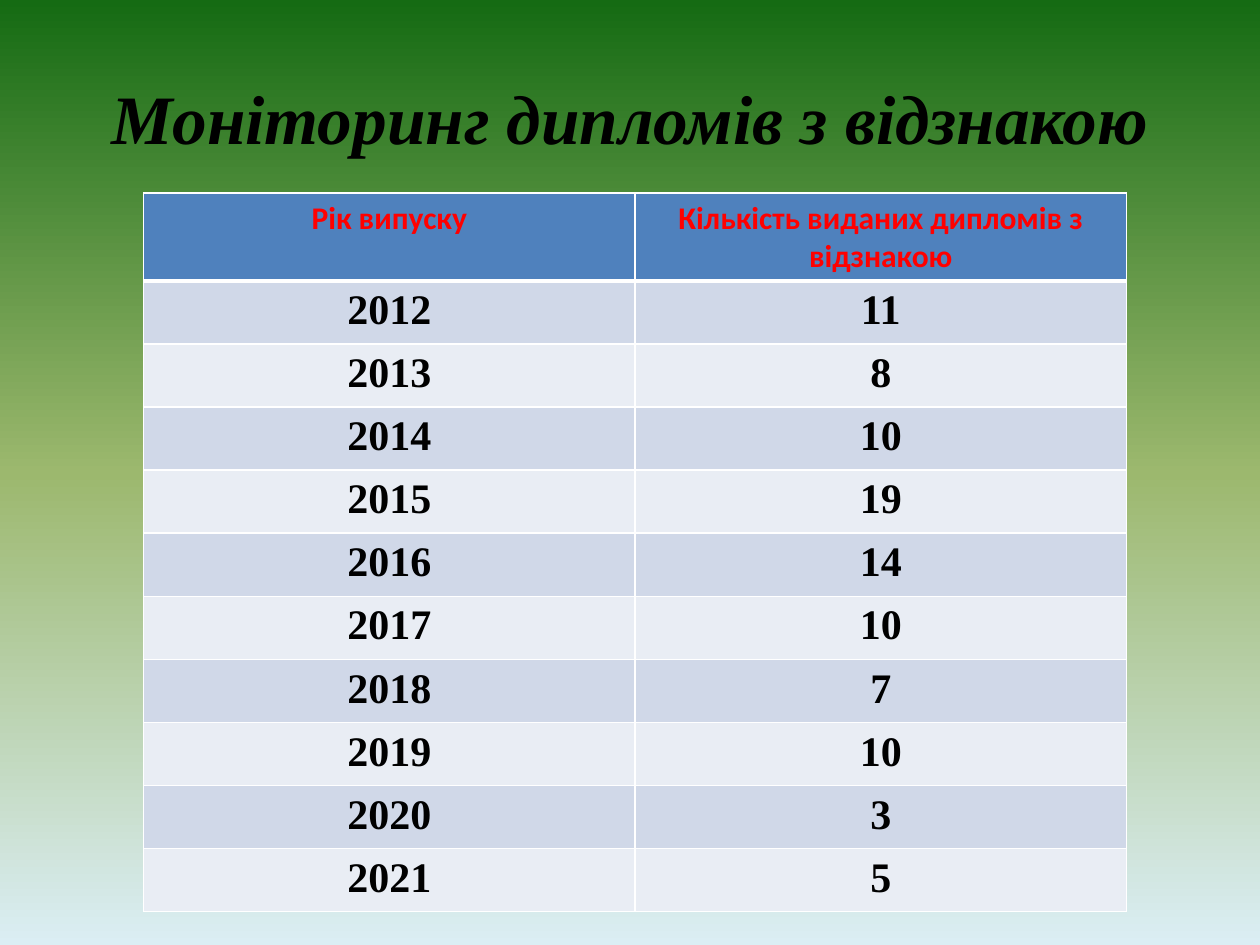
from copy import deepcopy

from lxml import etree
from pptx import Presentation
from pptx.dml.color import RGBColor
from pptx.enum.text import MSO_ANCHOR, PP_ALIGN
from pptx.oxml.ns import qn
from pptx.util import Inches, Pt

CENTER = PP_ALIGN.CENTER
MIDDLE = MSO_ANCHOR.MIDDLE

BLACK = RGBColor(0x00, 0x00, 0x00)
WHITE = RGBColor(0xFF, 0xFF, 0xFF)
RED = RGBColor(0xFF, 0x00, 0x00)
HEADER_BLUE = RGBColor(0x4F, 0x81, 0xBD)
BANDS = (RGBColor(0xD0, 0xD8, 0xE8), RGBColor(0xE9, 0xED, 0xF4))
BACKGROUND_STOPS = (
    (0, RGBColor(0xDB, 0xEE, 0xF4)),
    (0.5, RGBColor(0x9C, 0xB8, 0x6E)),
    (1, RGBColor(0x15, 0x6B, 0x13)),
)

SERIF = "Times New Roman"
SANS = "Calibri"

HEADINGS = ("Рік випуску", "Кількість виданих дипломів з відзнакою")
FIRST_YEAR = 2012
DIPLOMAS = (11, 8, 10, 19, 14, 10, 7, 10, 3, 5)

HEADER_HEIGHT = Inches(0.7)
ROW_HEIGHT = Inches(0.47)


def write_text(frame, text, font=SERIF, size=24, color=BLACK, italic=False):
    paragraph = frame.paragraphs[0]
    paragraph.alignment = CENTER
    run = paragraph.add_run()
    run.text = text
    run.font.name = font
    run.font.size = Pt(size)
    run.font.bold = True
    run.font.italic = italic
    run.font.color.rgb = color


def paint_background(slide):
    fill = slide.background.fill
    fill.gradient()
    fill.gradient_angle = 90
    stop_list = next(slide.element.iter(qn("a:gsLst")))
    stop_list.append(deepcopy(stop_list[0]))
    for stop, (position, color) in zip(fill.gradient_stops, BACKGROUND_STOPS):
        stop.position = position
        stop.color.rgb = color


def set_borders(cell, bottom_width):
    """Draw white lines round the cell, 1 pt wide except at the bottom."""
    properties = cell._tc.get_or_add_tcPr()
    widths = {"a:lnL": 1, "a:lnR": 1, "a:lnT": 1, "a:lnB": bottom_width}
    for index, (tag, width) in enumerate(widths.items()):
        line = etree.Element(qn(tag), w=str(Pt(width)))
        solid = etree.SubElement(line, qn("a:solidFill"))
        etree.SubElement(solid, qn("a:srgbClr"), val=str(WHITE))
        properties.insert(index, line)


def fill_cell(cell, text, background, bottom_width=1, **text_format):
    cell.fill.solid()
    cell.fill.fore_color.rgb = background
    write_text(cell.text_frame, text, **text_format)
    set_borders(cell, bottom_width)


def add_title(slide, left, top, width, height):
    frame = slide.shapes.add_textbox(left, top, width, height).text_frame
    frame.word_wrap = True
    frame.vertical_anchor = MIDDLE
    write_text(frame, "Моніторинг дипломів з відзнакою", size=39.6, italic=True)


def add_diploma_table(slide, left, top, width):
    height = HEADER_HEIGHT + ROW_HEIGHT * len(DIPLOMAS)
    table = slide.shapes.add_table(
        len(DIPLOMAS) + 1, len(HEADINGS), left, top, width, height
    ).table
    for row in table.rows:
        row.height = ROW_HEIGHT
    table.rows[0].height = HEADER_HEIGHT

    for column, heading in enumerate(HEADINGS):
        fill_cell(table.cell(0, column), heading, HEADER_BLUE, bottom_width=3,
                  font=SANS, size=18, color=RED)
    for index, count in enumerate(DIPLOMAS):
        for column, value in enumerate((FIRST_YEAR + index, count)):
            fill_cell(table.cell(index + 1, column), str(value),
                      BANDS[index % len(BANDS)],
                      bottom_width=1)
    for column in range(len(HEADINGS)):
        top_line = table.cell(1, column)._tc.tcPr.find(qn("a:lnT"))
        top_line.set("w", str(Pt(3)))


def main():
    presentation = Presentation()
    presentation.slide_width = Inches(10)
    presentation.slide_height = Inches(7.5)
    slide = presentation.slides.add_slide(presentation.slide_layouts[6])
    paint_background(slide)
    add_title(slide, Inches(0.5), Inches(0.3), Inches(9), Inches(1.25))
    add_diploma_table(slide, Inches(1.14), Inches(1.53), Inches(7.8))
    presentation.save("out.pptx")


if __name__ == "__main__":
    main()
